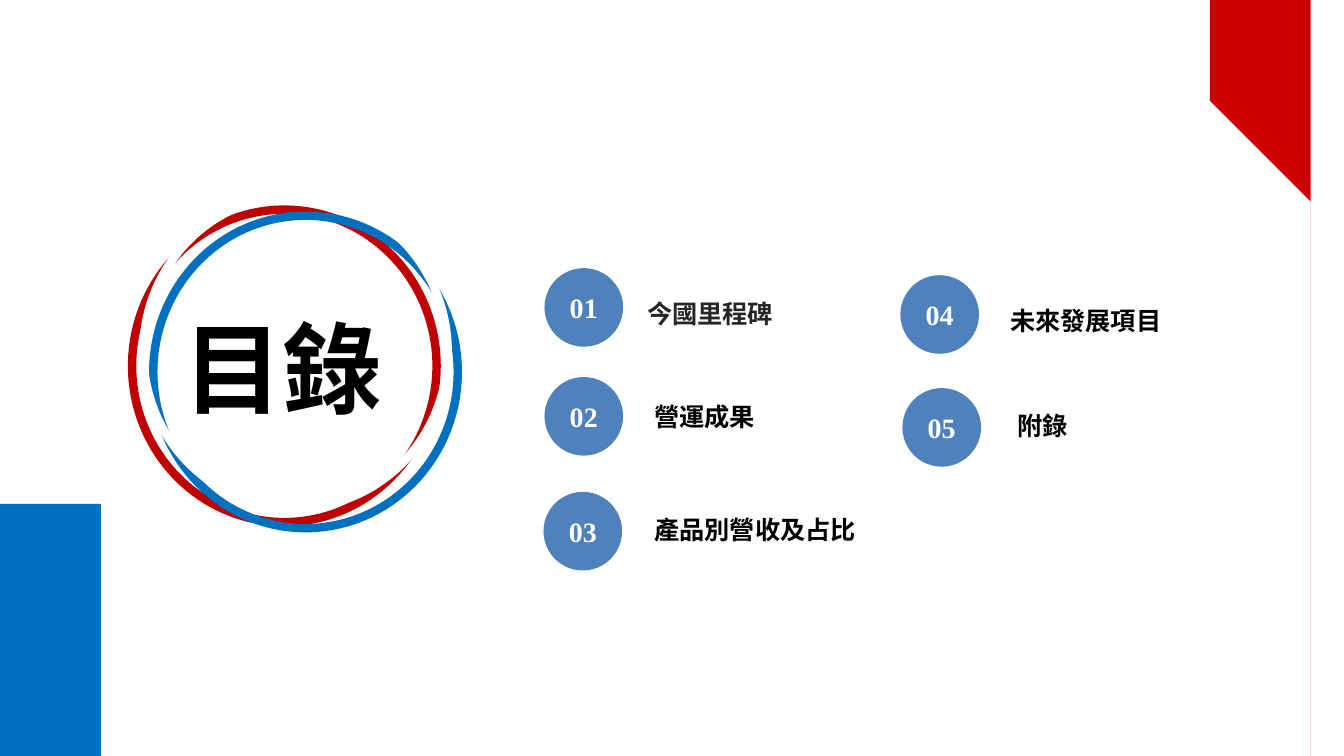
import pptx
import pptx.util
import pptx.dml.color
import pptx.enum.shapes
import pptx.enum.text
import lxml.etree
from dataclasses import dataclass


@dataclass(frozen=True)
class Theme:
    red: str = "CC0000"
    ring_red: str = "C00000"
    blue: str = "0070C0"
    badge: str = "4F81BD"
    white: str = "FFFFFF"
    black: str = "000000"
    soft_black: str = "262626"
    cjk_font: str = "Noto Sans CJK SC"
    latin_font: str = "Calibri"
    number_font: str = "Times New Roman"
    heading_size: int = 71
    number_size: int = 20
    entry_size: int = 18


THEME = Theme()
SLIDE_WIDTH, SLIDE_HEIGHT = 13.33, 7.5
RING_SIZE = (3.02, 3.1)
RING_WIDTH = 6
BADGE_SIZE = 0.78
ENTRY_HEIGHT = 0.73
CURVE_STEPS = 48

HEADING = "目錄"
HEADING_BOX = (1.7, 2.98, 2.73, 1.32)

RINGS = [
    (1.31, 2.08, THEME.ring_red),
    (1.52, 2.14, THEME.blue),
    (1.42, 1.94, THEME.white),
]

SWOOSHES = [
    {
        "color": THEME.red,
        "before": [(11.94, 0), (13.33, 0)],
        "curve": [(13.33, 7.5), (13.33, 4.77), (12.84, 2.23), (12, 0.13)],
    },
    {
        "color": THEME.blue,
        "before": [(0, 0), (0, 7.5), (1.3, 7.5)],
        "curve": [(1.12, 7.02), (0.41, 4.97), (0, 2.57), (0, 0)],
    },
]

ENTRIES = [
    ("01", (5.4, 2.66), "今國里程碑", (6.32, 2.76, 3.73), THEME.latin_font, THEME.soft_black),
    ("02", (5.4, 3.74), "營運成果", (6.39, 3.78, 4.28), THEME.cjk_font, THEME.black),
    ("03", (5.39, 4.88), "產品別營收及占比", (6.39, 4.9, 4.28), THEME.cjk_font, THEME.black),
    ("04", (8.93, 2.73), "未來發展項目", (9.92, 2.83, 3.36), THEME.cjk_font, THEME.black),
    ("05", (8.95, 3.85), "附錄", (9.99, 3.87, 3.34), THEME.cjk_font, THEME.black),
]


def inches(*lengths):
    return [pptx.util.Inches(length) for length in lengths]


def rgb(color):
    return pptx.dml.color.RGBColor.from_string(color)


def write(frame, text, font, size, color, align, insets=(0.1, 0.05)):
    frame.word_wrap = True
    frame.auto_size = pptx.enum.text.MSO_AUTO_SIZE.NONE
    frame.vertical_anchor = pptx.enum.text.MSO_ANCHOR.MIDDLE
    frame.margin_left = frame.margin_right = pptx.util.Inches(insets[0])
    frame.margin_top = frame.margin_bottom = pptx.util.Inches(insets[1])
    paragraph = frame.paragraphs[0]
    paragraph.alignment = align
    run = paragraph.add_run()
    run.text = text
    run.font.name = font
    run.font.size = pptx.util.Pt(size)
    run.font.bold = True
    run.font.color.rgb = rgb(color)
    if font == THEME.cjk_font:
        east_asian = lxml.etree.SubElement(run.font._element, pptx.oxml.ns.qn("a:ea"))
        east_asian.set("typeface", font)
    return paragraph


def fill_plain(shape, color):
    shape.shadow.inherit = False
    shape.fill.solid()
    shape.fill.fore_color.rgb = rgb(color)
    shape.line.fill.background()


def add_oval(shapes, left, top, width, height):
    oval = pptx.enum.shapes.MSO_SHAPE.OVAL
    return shapes.add_shape(oval, *inches(left, top, width, height))


def add_ring(shapes, left, top, color):
    ring = add_oval(shapes, left, top, *RING_SIZE)
    ring.shadow.inherit = False
    ring.fill.background()
    ring.line.color.rgb = rgb(color)
    ring.line.width = pptx.util.Pt(RING_WIDTH)


def curve_points(start, first, second, end):
    points = []
    for step in range(CURVE_STEPS + 1):
        t = step / CURVE_STEPS
        weights = ((1 - t) ** 3, 3 * t * (1 - t) ** 2, 3 * t**2 * (1 - t), t**3)
        controls = (start, first, second, end)
        points.append(tuple(
            sum(weight * control[axis] for weight, control in zip(weights, controls))
            for axis in (0, 1)
        ))
    return points


def add_swoosh(shapes, swoosh):
    outline = swoosh["before"] + curve_points(*swoosh["curve"])
    builder = shapes.build_freeform(*outline[0], scale=pptx.util.Inches(1))
    builder.add_line_segments(outline[1:], close=True)
    fill_plain(builder.convert_to_shape(), swoosh["color"])


def add_entry(shapes, number, badge_at, label, label_at, font, color):
    align = pptx.enum.text.PP_ALIGN
    badge = add_oval(shapes, *badge_at, BADGE_SIZE, BADGE_SIZE)
    fill_plain(badge, THEME.badge)
    write(badge.text_frame, number, THEME.number_font, THEME.number_size,
          THEME.white, align.CENTER, insets=(0, 0))
    box = shapes.add_textbox(*inches(*label_at, ENTRY_HEIGHT))
    paragraph = write(box.text_frame, label, font, THEME.entry_size, color, align.LEFT)
    paragraph.line_spacing = pptx.util.Pt(20)


def main():
    deck = pptx.Presentation()
    deck.slide_width, deck.slide_height = inches(SLIDE_WIDTH, SLIDE_HEIGHT)
    slide = deck.slides.add_slide(deck.slide_layouts.get_by_name("Title Only"))
    slide.background.fill.solid()
    slide.background.fill.fore_color.rgb = rgb(THEME.white)
    shapes = slide.shapes

    heading = shapes.title
    heading.left, heading.top, heading.width, heading.height = inches(*HEADING_BOX)
    write(heading.text_frame, HEADING, THEME.cjk_font, THEME.heading_size,
          THEME.black, pptx.enum.text.PP_ALIGN.LEFT, insets=(0.12, 0.06))

    for ring in RINGS:
        add_ring(shapes, *ring)
    for swoosh in SWOOSHES:
        add_swoosh(shapes, swoosh)
    for entry in ENTRIES:
        add_entry(shapes, *entry)

    deck.save("out.pptx")


if __name__ == "__main__":
    main()
